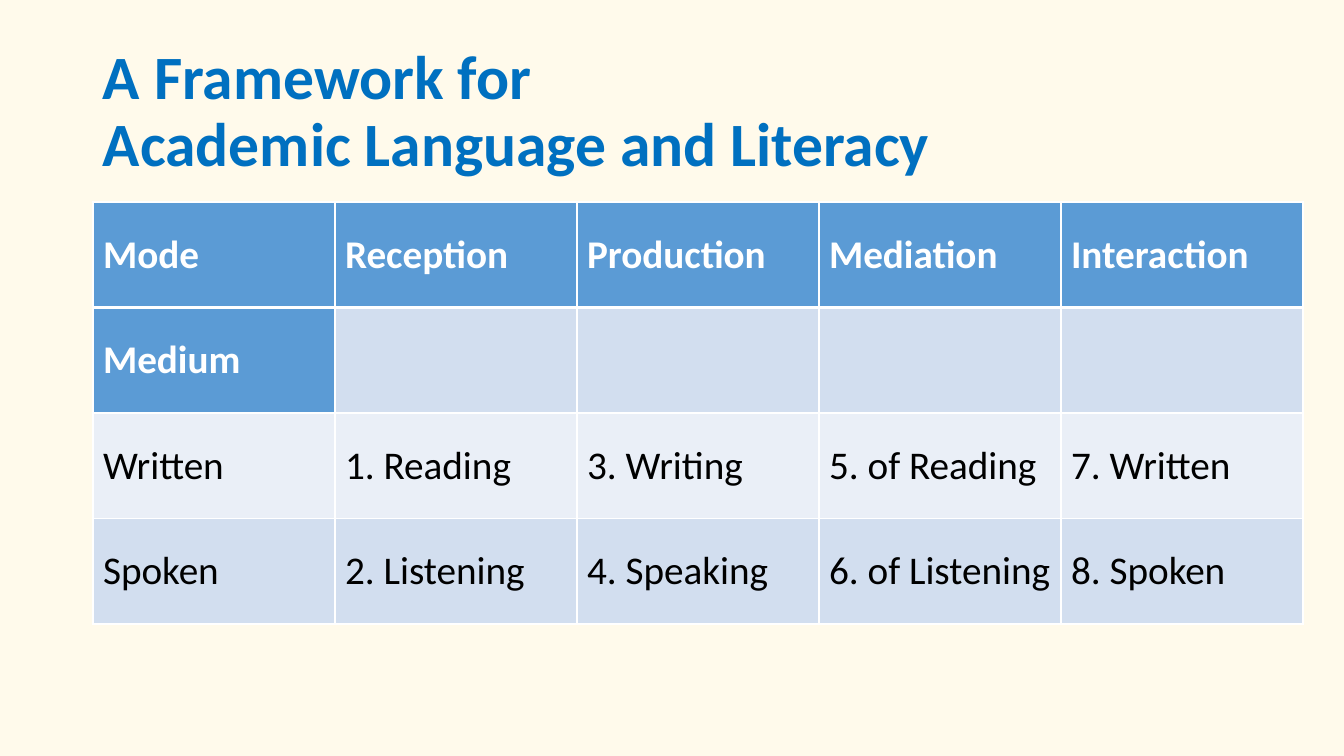
from dataclasses import dataclass
from lxml import etree
from pptx import Presentation
from pptx import util as u
from pptx.dml.color import RGBColor
from pptx.enum import text
from pptx.oxml import ns

TITLE = ["A Framework for", "Academic Language and Literacy"]
ROWS = [
    ["Mode", "Reception", "Production", "Mediation", "Interaction"],
    ["Medium", "", "", "", ""],
    ["Written", "1. Reading", "3. Writing", "5. of Reading", "7. Written"],
    ["Spoken", "2. Listening", "4. Speaking", "6. of Listening", "8. Spoken"],
]
PAGE = (1344, 756)
HEAD = (93, 40, 1159, 146)
GRID = (93, 202, 1210, 422)
SCALE = 914400 / 100.8


@dataclass(frozen=True)
class Theme:
    font: str = "Calibri"
    back: str = "FFFAEB"
    title: str = "0070C0"
    head: str = "5B9BD5"
    dark: str = "D2DEEF"
    light: str = "EAEFF7"
    ink: str = "000000"
    white: str = "FFFFFF"
    big: int = 44
    body: int = 28
    thin: int = 1
    thick: int = 3


THEME = Theme()


def px(n):
    return u.Emu(round(n * SCALE))


def rgb(code):
    return RGBColor.from_string(code)


def add_run(para, words, size, color, bold):
    run = para.add_run()
    run.text = words
    font = run.font
    font.name, font.size, font.bold = THEME.font, u.Pt(size), bold
    font.color.rgb = rgb(color)


def add_edge(cell, side, width):
    props = cell._tc.get_or_add_tcPr()
    line = etree.SubElement(props, ns.qn("a:ln" + side), w=str(u.Pt(width)))
    fill = etree.SubElement(line, ns.qn("a:solidFill"))
    etree.SubElement(fill, ns.qn("a:srgbClr"), val=THEME.white)


def add_title(slide):
    frame = slide.shapes.add_textbox(*map(px, HEAD)).text_frame
    frame.word_wrap = True
    frame.vertical_anchor = text.MSO_ANCHOR.MIDDLE
    para = frame.paragraphs[0]
    para.line_spacing = 0.9
    for i, words in enumerate(TITLE):
        if i:
            para.add_line_break()
        add_run(para, words, THEME.big, THEME.title, True)


def fill_cell(cell, r, c, words):
    head = r == 0 or (r == 1 and c == 0)
    edges = {
        "L": THEME.thin,
        "R": THEME.thin,
        "T": THEME.thick if r == 1 else THEME.thin,
        "B": THEME.thick if r == 0 else THEME.thin,
    }
    for side, width in edges.items():
        add_edge(cell, side, width)
    band = THEME.dark if r % 2 else THEME.light
    cell.fill.solid()
    cell.fill.fore_color.rgb = rgb(THEME.head if head else band)
    cell.vertical_anchor = text.MSO_ANCHOR.MIDDLE
    if words:
        color = THEME.white if head else THEME.ink
        add_run(cell.text_frame.paragraphs[0], words, THEME.body, color, head)


def add_grid(slide):
    rows, cols = len(ROWS), len(ROWS[0])
    table = slide.shapes.add_table(rows, cols, *map(px, GRID)).table
    for col in table.columns:
        col.width = px(GRID[2] / cols)
    for row in table.rows:
        row.height = px(GRID[3] / rows)
    for r, line in enumerate(ROWS):
        for c, words in enumerate(line):
            fill_cell(table.cell(r, c), r, c, words)


def main():
    deck = Presentation()
    deck.slide_width, deck.slide_height = map(px, PAGE)
    slide = deck.slides.add_slide(deck.slide_layouts[6])
    slide.background.fill.solid()
    slide.background.fill.fore_color.rgb = rgb(THEME.back)
    add_title(slide)
    add_grid(slide)
    deck.save("out.pptx")


if __name__ == "__main__":
    main()
